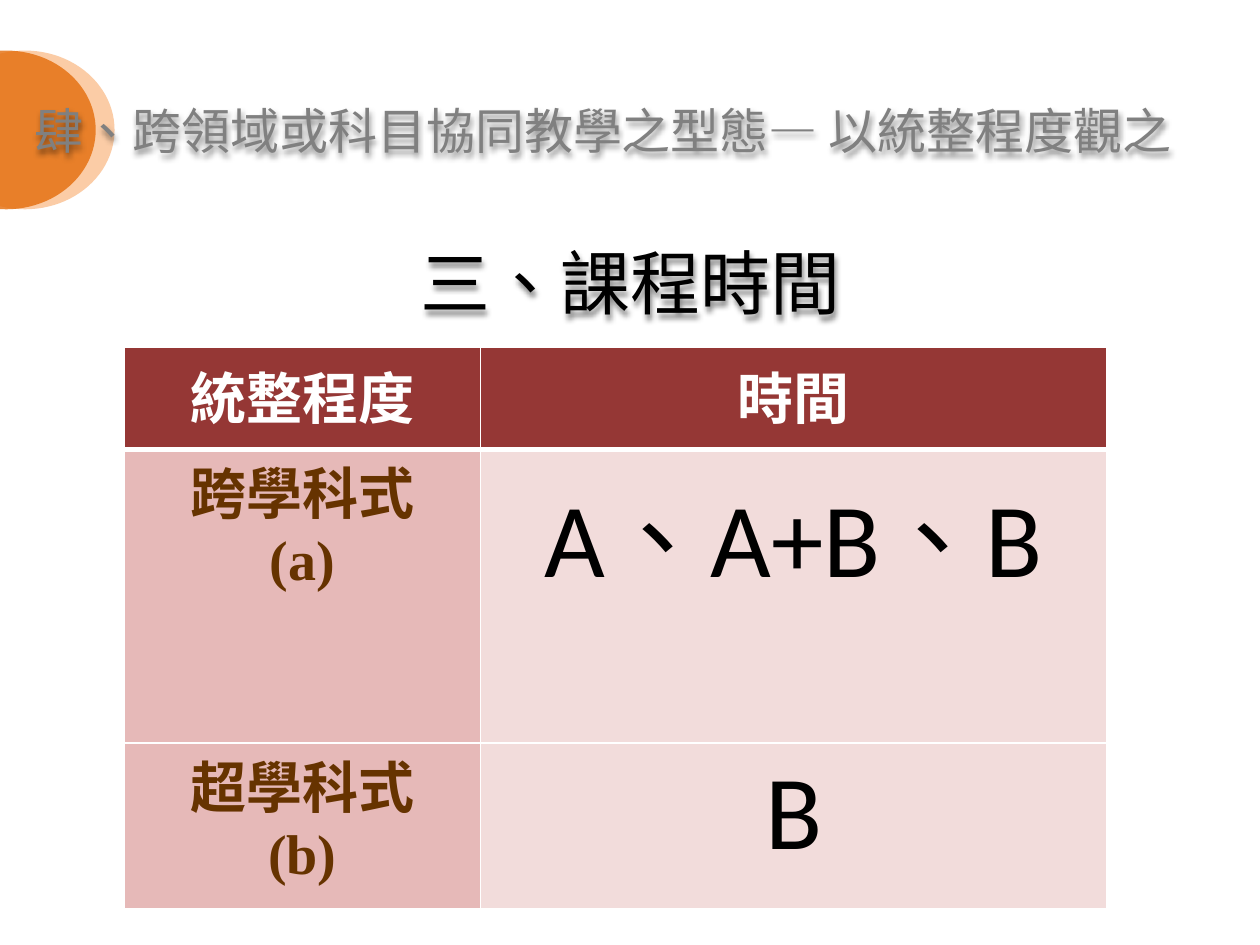
from collections import namedtuple
from dataclasses import dataclass

from lxml.etree import SubElement
from pptx import Presentation
from pptx.dml.color import RGBColor
from pptx.enum.shapes import MSO_SHAPE as Shape
from pptx.enum.text import MSO_ANCHOR as Anchor, PP_ALIGN as Align
from pptx.oxml import parse_xml
from pptx.oxml.ns import nsdecls, qn
from pptx.util import Cm, Pt

Box = namedtuple("Box", "left top width height")


@dataclass(frozen=True)
class Theme:
    serif: str = "Times New Roman"
    sans: str = "Calibri"
    heading_font: str = "Noto Sans CJK SC"
    language: str = "zh-TW"
    black: str = "000000"
    white: str = "FFFFFF"
    grey: str = "808080"
    brown: str = "663300"
    header_fill: str = "953735"
    label_fill: str = "E6B9B8"
    value_fill: str = "F2DCDB"
    pale_orange: str = "FAC090"
    orange: str = "E46C0A"
    banner_size: int = 28
    label_size: int = 32
    title_size: int = 40
    value_size: int = 60


THEME = Theme()


def write_text(frame, text, *, font, size, color, bold=False):
    for index, line in enumerate(text.split("\n")):
        para = frame.paragraphs[0] if index == 0 else frame.add_paragraph()
        para.alignment = Align.CENTER
        span = para.add_run()
        span.text = line
        span.font.name = font
        span.font.size = Pt(size)
        span.font.bold = bold
        span.font.color.rgb = RGBColor.from_string(color)
        span._r.get_or_add_rPr().set("lang", THEME.language)


def add_heading(page, box, text, **style):
    heading = page.shapes.add_textbox(*map(Cm, box))
    frame = heading.text_frame
    frame.word_wrap = True
    frame.vertical_anchor = Anchor.MIDDLE
    write_text(frame, text, font=THEME.serif, **style)
    heading._element.spPr.append(parse_xml(
        f'<a:effectLst {nsdecls("a")}>'
        '<a:outerShdw blurRad="38100" dist="25400" dir="5400000">'
        '<a:srgbClr val="000000"><a:alpha val="45000"/></a:srgbClr>'
        '</a:outerShdw></a:effectLst>'))


def add_crescent(page, box):
    shift = 0.38
    for left, color in ((box.left + shift, THEME.pale_orange), (box.left, THEME.orange)):
        disc = page.shapes.add_shape(
            Shape.OVAL, Cm(left), Cm(box.top), Cm(box.width - shift), Cm(box.height))
        disc.shadow.inherit = False
        disc.line.fill.background()
        disc.fill.solid()
        disc.fill.fore_color.rgb = RGBColor.from_string(color)
        tint = disc._element.spPr.find(qn("a:solidFill"))[0]
        SubElement(tint, qn("a:alpha"), val="80000")


def set_borders(cell, bottom):
    properties = cell._tc.get_or_add_tcPr()
    widths = {"lnL": 1, "lnR": 1, "lnT": 1, "lnB": bottom}
    for index, (side, width) in enumerate(widths.items()):
        properties.insert(index, parse_xml(
            f'<a:{side} {nsdecls("a")} w="{Pt(width)}"><a:solidFill>'
            f'<a:srgbClr val="{THEME.white}"/></a:solidFill></a:{side}>'))


def fill_cell(cell, text, fill, *, bottom=1, **style):
    cell.fill.solid()
    cell.fill.fore_color.rgb = RGBColor.from_string(fill)
    set_borders(cell, bottom)
    write_text(cell.text_frame, text, **style)


def add_time_table(page, box):
    rows = (("統整程度", "時間"), ("跨學科式\n(a)", "A、A+B、B"), ("超學科式\n(b)", "B"))
    header_height, last_height = 2.05, 3.35
    heights = (header_height, box.height - header_height - last_height, last_height)
    label_width = 7.19
    table = page.shapes.add_table(len(rows), 2, *map(Cm, box)).table
    for column, width in zip(table.columns, (label_width, box.width - label_width)):
        column.width = Cm(width)
    for row, height in zip(table.rows, heights):
        row.height = Cm(height)

    header = dict(font=THEME.heading_font, size=THEME.label_size, color=THEME.white, bold=True)
    label = dict(font=THEME.serif, size=THEME.label_size, color=THEME.brown, bold=True)
    value = dict(font=THEME.sans, size=THEME.value_size, color=THEME.black)
    for column, text in enumerate(rows[0]):
        fill_cell(table.cell(0, column), text, THEME.header_fill, bottom=3, **header)
    for index, (name, time) in enumerate(rows[1:], start=1):
        name_cell = table.cell(index, 0)
        name_cell.margin_left = name_cell.margin_right = Cm(0.18)
        name_cell.margin_top = name_cell.margin_bottom = 0
        fill_cell(name_cell, name, THEME.label_fill, **label)
        fill_cell(table.cell(index, 1), time, THEME.value_fill, **value)


def main():
    deck = Presentation()
    deck.slide_width, deck.slide_height = Cm(25.4), Cm(19.05)
    page = deck.slides.add_slide(deck.slide_layouts[6])
    add_heading(page, Box(2.92, 4.4, 19.58, 2.57), "三、課程時間",
                size=THEME.title_size, color=THEME.black)
    add_time_table(page, Box(2.5, 7.01, 19.81, 11.32))
    add_crescent(page, Box(-1.68, 1.02, 3.99, 3.2))
    add_heading(page, Box(0, 1.32, 24.31, 2.59),
                "肆、跨領域或科目協同教學之型態— 以統整程度觀之",
                size=THEME.banner_size, color=THEME.grey)
    deck.save("out.pptx")


if __name__ == "__main__":
    main()
